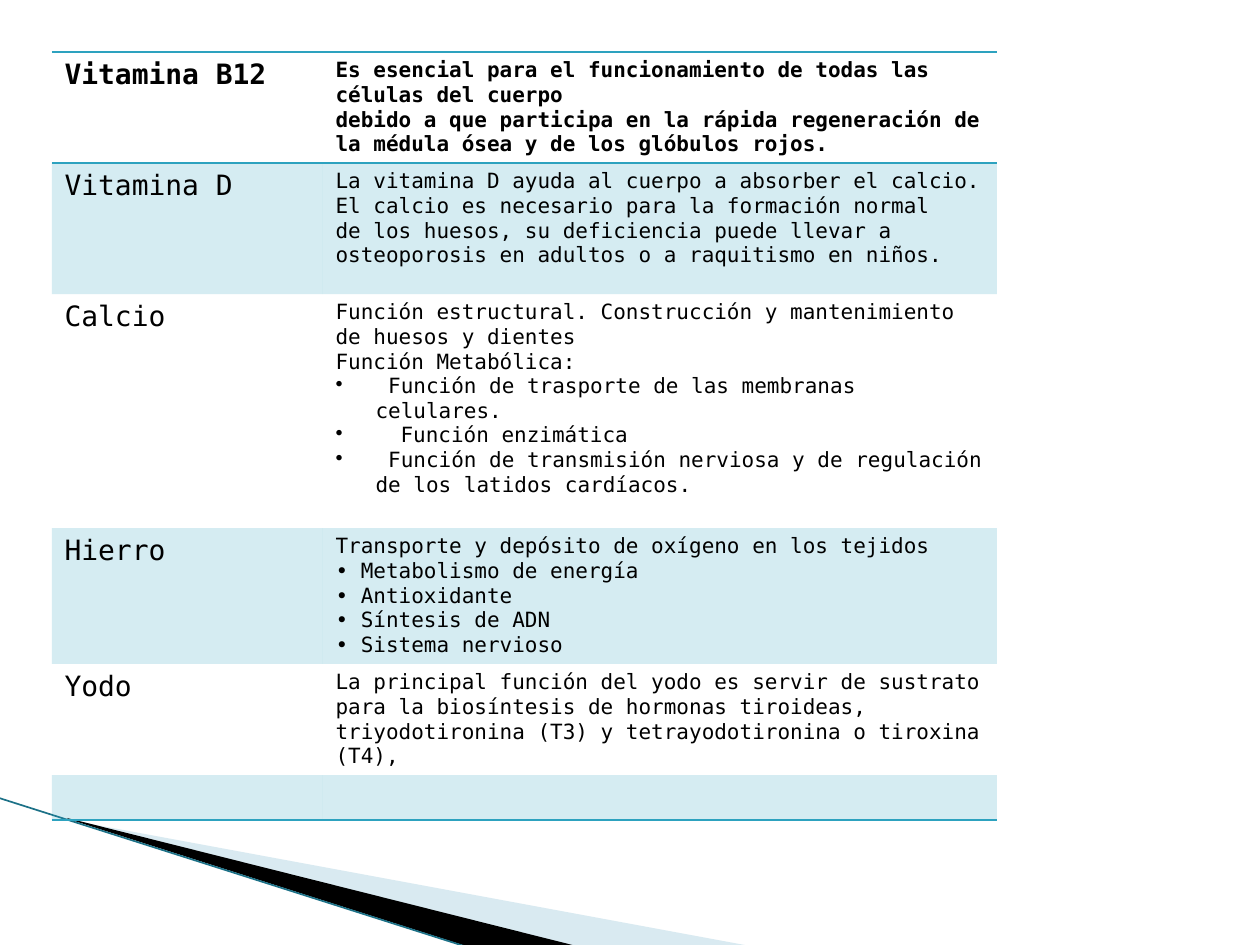
import pptx
import pptx.util
import pptx.dml.color
import pptx.enum.shapes
import pptx.oxml.ns
import lxml.etree

PX = 914400 / 126
TEAL = "2DA2BF"
PLAIN_TABLE = "{2D5ABB26-0587-4C30-8999-92F81FD0307C}"
qn = pptx.oxml.ns.qn


def px(n):
    return pptx.util.Emu(round(n * PX))


def rgb(value):
    return pptx.dml.color.RGBColor.from_string(value)


def sub(parent, tag, **attrs):
    return lxml.etree.SubElement(parent, qn(tag), attrs)


class Deck:
    font = "DejaVu Sans Mono"
    color = "000000"

    def __init__(self, width, height):
        self.prs = pptx.Presentation()
        self.prs.slide_width, self.prs.slide_height = px(width), px(height)
        self.s = self.prs.slides.add_slide(self.prs.slide_layouts[6])

    def paint(self, fill, parent, color, alpha=100):
        fill.solid()
        fill.fore_color.rgb = rgb(color)
        if alpha < 100:
            clr = parent.find(qn("a:solidFill")).find(qn("a:srgbClr"))
            sub(clr, "a:alpha", val=str(alpha * 1000))

    def polygon(self, points, color, alpha=100):
        builder = self.s.shapes.build_freeform(*points[0], scale=PX)
        builder.add_line_segments(points[1:], close=True)
        sp = builder.convert_to_shape()
        sp.shadow.inherit = False
        sp.line.fill.background()
        self.paint(sp.fill, sp._element.spPr, color, alpha)

    def line(self, x1, y1, x2, y2, color, width):
        kind = pptx.enum.shapes.MSO_CONNECTOR.STRAIGHT
        sp = self.s.shapes.add_connector(kind, px(x1), px(y1), px(x2), px(y2))
        sp.line.color.rgb = rgb(color)
        sp.line.width = pptx.util.Pt(width)
        sub(sp._element.spPr, "a:effectLst")

    def paragraphs(self, tf, lines, size, bold):
        style = {"name": self.font, "size": pptx.util.Pt(size), "bold": bold}
        for i, (line, indent) in enumerate(lines):
            p = tf.add_paragraph() if i else tf.paragraphs[0]
            if indent:
                pPr = p._p.get_or_add_pPr()
                pPr.set("marL", str(px(indent)))
                pPr.set("indent", str(-px(indent)))
                sub(pPr, "a:buChar", char="•")
            r = p.add_run()
            r.text = line
            for name, value in style.items():
                setattr(r.font, name, value)
            r.font.color.rgb = rgb(self.color)

    def border(self, tcPr, sides):
        for side in sides:
            ln = sub(tcPr, "a:ln" + side, w="12700")
            sub(sub(ln, "a:solidFill"), "a:srgbClr", val=TEAL)

    def table(self, x, y, widths, rows):
        shape = self.s.shapes.add_table(len(rows), len(widths), px(x), px(y),
                                        px(sum(widths)), px(sum(row[0] for row in rows)))
        table = shape.table
        table.first_row = table.horz_banding = False
        table._tbl.tblPr.find(qn("a:tableStyleId")).text = PLAIN_TABLE
        for column, width in zip(table.columns, widths):
            column.width = px(width)
        for i, (height, name, lines) in enumerate(rows):
            table.rows[i].height = px(height)
            sides = "TB" if i == 0 else "B" if i == len(rows) - 1 else ""
            for cell, content, size in zip(table.rows[i].cells, ([(name, 0)], lines), (16, 12)):
                tcPr = cell._tc.get_or_add_tcPr()
                self.border(tcPr, sides)
                if i % 2:
                    self.paint(cell.fill, tcPr, TEAL, 20)
                else:
                    cell.fill.background()
                if name:
                    self.paragraphs(cell.text_frame, content, size, i == 0)
                else:
                    cell.margin_top = cell.margin_bottom = 0


ROWS = [
    (111, "Vitamina B12", [
        ("Es esencial para el funcionamiento de todas las células del cuerpo", 0),
        ("debido a que participa en la rápida regeneración de la médula ósea y de los glóbulos rojos.", 0)]),
    (131, "Vitamina D", [
        ("La vitamina D ayuda al cuerpo a absorber el calcio. "
         "El calcio es necesario para la formación normal", 0),
        ("de los huesos, su deficiencia puede llevar a osteoporosis en adultos o a raquitismo en niños.", 0)]),
    (234, "Calcio", [
        ("Función estructural. Construcción y mantenimiento de huesos y dientes", 0),
        ("Función Metabólica:", 0),
        (" Función de trasporte de las membranas celulares.", 40),
        ("Función enzimática", 65),
        (" Función de transmisión nerviosa y de regulación de los latidos cardíacos.", 40)]),
    (136, "Hierro", [
        ("Transporte y depósito de oxígeno en los tejidos", 0),
        ("• Metabolismo de energía", 0),
        ("• Antioxidante", 0),
        ("• Síntesis de ADN", 0),
        ("• Sistema nervioso", 0)]),
    (111, "Yodo", [
        ("La principal función del yodo es servir de sustrato para la biosíntesis de hormonas tiroideas,", 0),
        ("triyodotironina (T3) y tetrayodotironina o tiroxina (T4),", 0)]),
    (45, "", []),
]


def main():
    deck = Deck(1260, 945)
    deck.polygon([(69, 820), (750, 946), (575, 946), (69, 819)], "A0CBDC", 40)
    deck.polygon([(67, 818), (576, 946), (469, 947), (68, 819)], "000000")
    deck.line(-1, 798, 467, 947, "1C7187", 0.95)
    deck.table(52, 52, [271, 674], ROWS)
    deck.prs.save("out.pptx")


if __name__ == "__main__":
    main()
